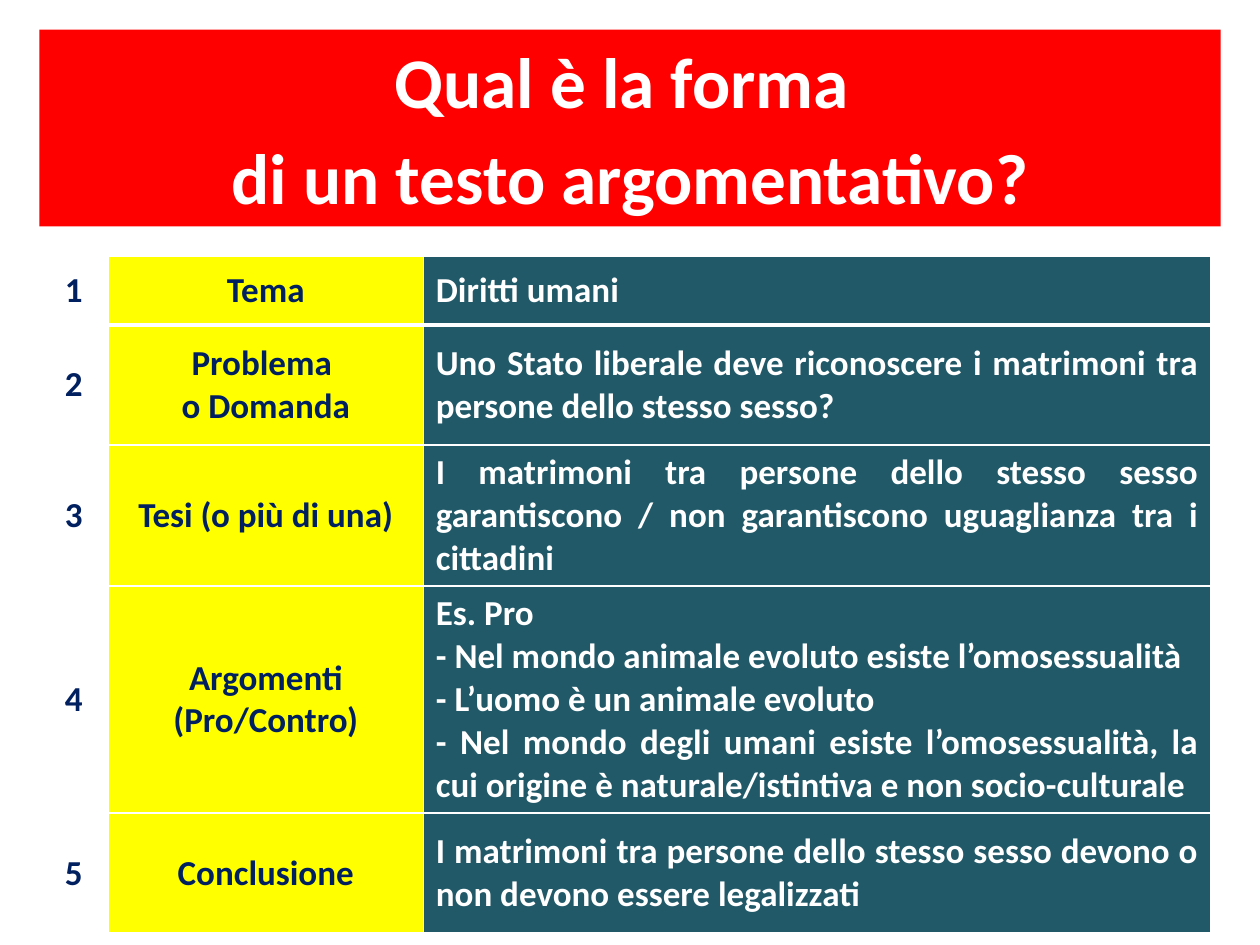
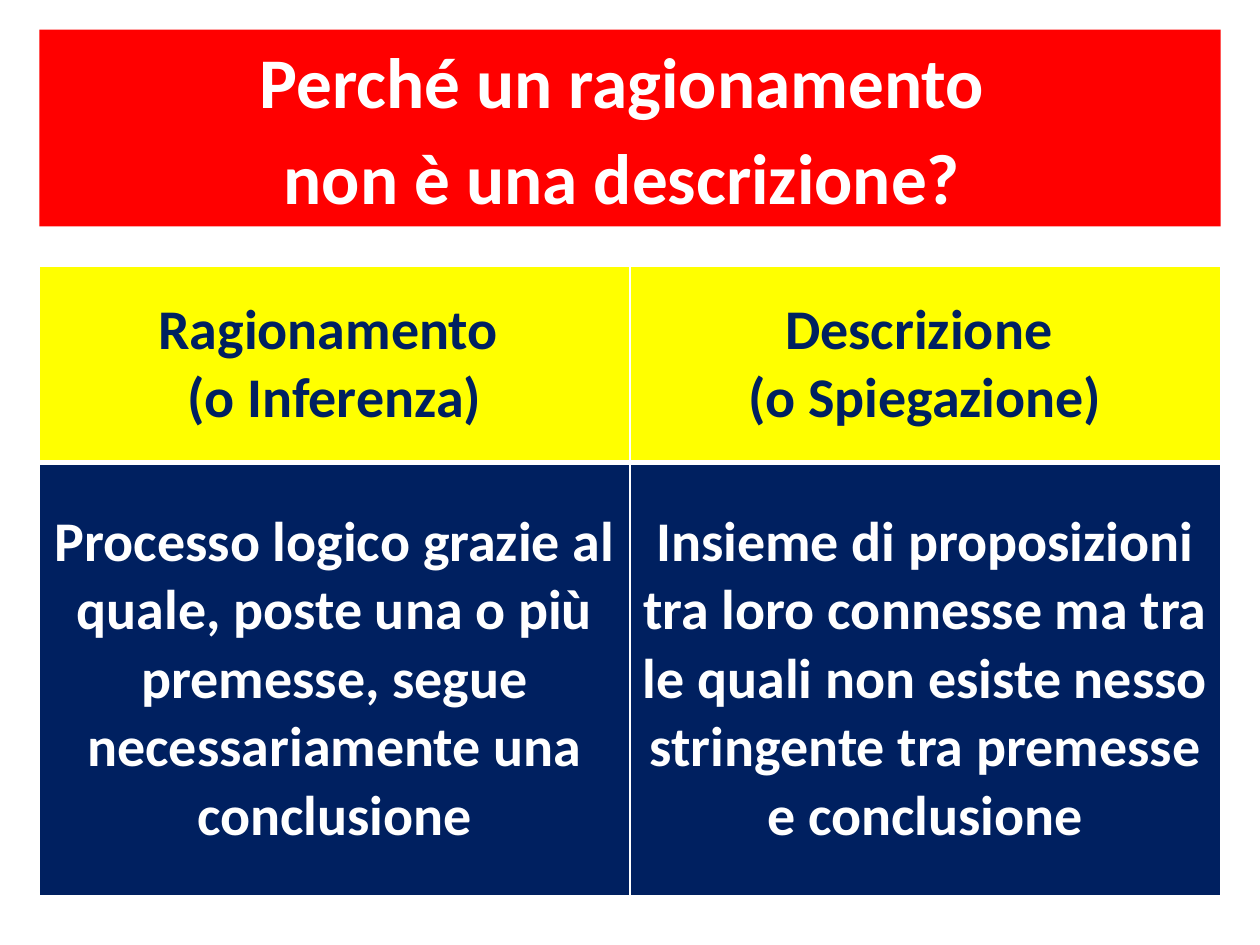
from lxml.etree import SubElement
from pptx import Presentation
from pptx.dml.color import RGBColor
from pptx.enum.text import MSO_ANCHOR as Anchor, MSO_AUTO_SIZE as AutoSize, PP_ALIGN as Align
from pptx.oxml.ns import qn
from pptx.util import Inches, Pt

RED = RGBColor(0xFF, 0x00, 0x00)
YELLOW = RGBColor(0xFF, 0xFF, 0x00)
NAVY = RGBColor(0x00, 0x20, 0x60)
TEAL = RGBColor(0x21, 0x59, 0x68)
WHITE = RGBColor(0xFF, 0xFF, 0xFF)

FONT = "Calibri"
GRID_COLUMNS, GRID_ROWS = 32, 48
TITLE_ONLY = 5
THIN, THICK = Pt(1), Pt(3)

# Cell looks: fill, text colour, alignment
NUMBER = (WHITE, NAVY, Align.CENTER)
LABEL = (YELLOW, NAVY, Align.CENTER)
EXAMPLE = (TEAL, WHITE, Align.JUSTIFY)
DEFINITION = (NAVY, WHITE, Align.CENTER)

TEXT_PARTS = [
    (["Tema"], ["Diritti umani"]),
    (["Problema ", "o Domanda"],
     ["Uno Stato liberale deve riconoscere i matrimoni tra persone dello stesso sesso?"]),
    (["Tesi (o più di una)"],
     ["I matrimoni tra persone dello stesso sesso garantiscono / non garantiscono "
      "uguaglianza tra i cittadini"]),
    (["Argomenti (Pro/Contro)"],
     ["Es. Pro",
      "- Nel mondo animale evoluto esiste l’omosessualità ",
      "- L’uomo è un animale evoluto",
      "- Nel mondo degli umani esiste l’omosessualità, la cui origine è "
      "naturale/istintiva e non socio-culturale"]),
    (["Conclusione"],
     ["I matrimoni tra persone dello stesso sesso devono o non devono essere legalizzati"]),
]

COMPARISON = [
    [["Ragionamento ", "(o Inferenza)"], ["Descrizione ", "(o Spiegazione)"]],
    [["Processo logico grazie al quale, poste una o più premesse, segue "
      "necessariamente una conclusione"],
     ["Insieme di proposizioni tra loro connesse ma tra le quali non esiste nesso "
      "stringente tra premesse e conclusione"]],
]


class Deck:
    """Holds the shared style, the layout grid and the current slide."""

    def __init__(self):
        self.deck = Presentation()
        self.deck.slide_width, self.deck.slide_height = Inches(10), Inches(7.5)
        self.page = None

    def across(self, columns):
        return round(self.deck.slide_width * columns / GRID_COLUMNS)

    def down(self, rows):
        return round(self.deck.slide_height * rows / GRID_ROWS)

    def add_page(self, title_lines):
        self.page = self.deck.slides.add_slide(self.deck.slide_layouts[TITLE_ONLY])
        banner = self.page.shapes.title
        banner.left, banner.top = self.across(1), self.down(1.5)
        banner.width, banner.height = self.across(30), self.down(10)
        banner.fill.solid()
        banner.fill.fore_color.rgb = RED
        frame = banner.text_frame
        frame.auto_size = AutoSize.NONE
        frame.vertical_anchor = Anchor.MIDDLE
        frame.margin_top = frame.margin_bottom = 0
        self.add_lines(frame, title_lines, 40.7, WHITE, Align.CENTER, space_before=6.5)

    def add_lines(self, frame, lines, size, color, align, space_before=0):
        for index, line in enumerate(lines):
            para = frame.add_paragraph() if index else frame.paragraphs[0]
            para.alignment = align
            para.space_before = Pt(space_before)
            span = para.add_run()
            span.text = line
            span.font.name, span.font.size, span.font.bold = FONT, Pt(size), True
            span.font.color.rgb = color

    def add_table(self, top, widths, heights, rows, size):
        """Draw a table whose rows hold (lines, look) pairs; sizes are in grid units."""
        table = self.page.shapes.add_table(
            len(heights), len(widths), self.across(1), self.down(top),
            self.across(sum(widths)), self.down(sum(heights))).table
        table.horz_banding = False
        for column, width in zip(table.columns, widths):
            column.width = self.across(width)
        for row, height in zip(table.rows, heights):
            row.height = self.down(height)
        for row_index, row in enumerate(rows):
            for column_index, (lines, (fill, color, align)) in enumerate(row):
                cell = table.cell(row_index, column_index)
                self.add_borders(cell, row_index)
                cell.fill.solid()
                cell.fill.fore_color.rgb = fill
                cell.vertical_anchor = Anchor.MIDDLE
                self.add_lines(cell.text_frame, lines, size, color, align)

    def add_borders(self, cell, row_index):
        """Rule the cell in white, with a thick line under the first row."""
        properties = cell._tc.get_or_add_tcPr()
        thick_side = {0: "B", 1: "T"}.get(row_index)
        for side in "LRTB":
            width = THICK if side == thick_side else THIN
            line = SubElement(properties, qn(f"a:ln{side}"), w=str(int(width)))
            fill = SubElement(line, qn("a:solidFill"))
            SubElement(fill, qn("a:srgbClr"), val=str(WHITE))


def main():
    slides = Deck()

    slides.add_page(["Qual è la forma ", "di un testo argomentativo?"])
    numbered_parts = [[([str(number)], NUMBER), (label, LABEL), (example, EXAMPLE)]
                      for number, (label, example) in enumerate(TEXT_PARTS, 1)]
    slides.add_table(13, [1.75, 8, 20], [3.5, 6.1, 6.1, 11.25, 6.1], numbered_parts, 20)

    slides.add_page(["Perché un ragionamento ", "non è una descrizione? "])
    compared = [[(lines, look) for lines in row]
                for row, look in zip(COMPARISON, [LABEL, DEFINITION])]
    slides.add_table(13.5, [15, 15], [10, 22], compared, 32)

    slides.deck.save("out.pptx")


if __name__ == "__main__":
    main()
